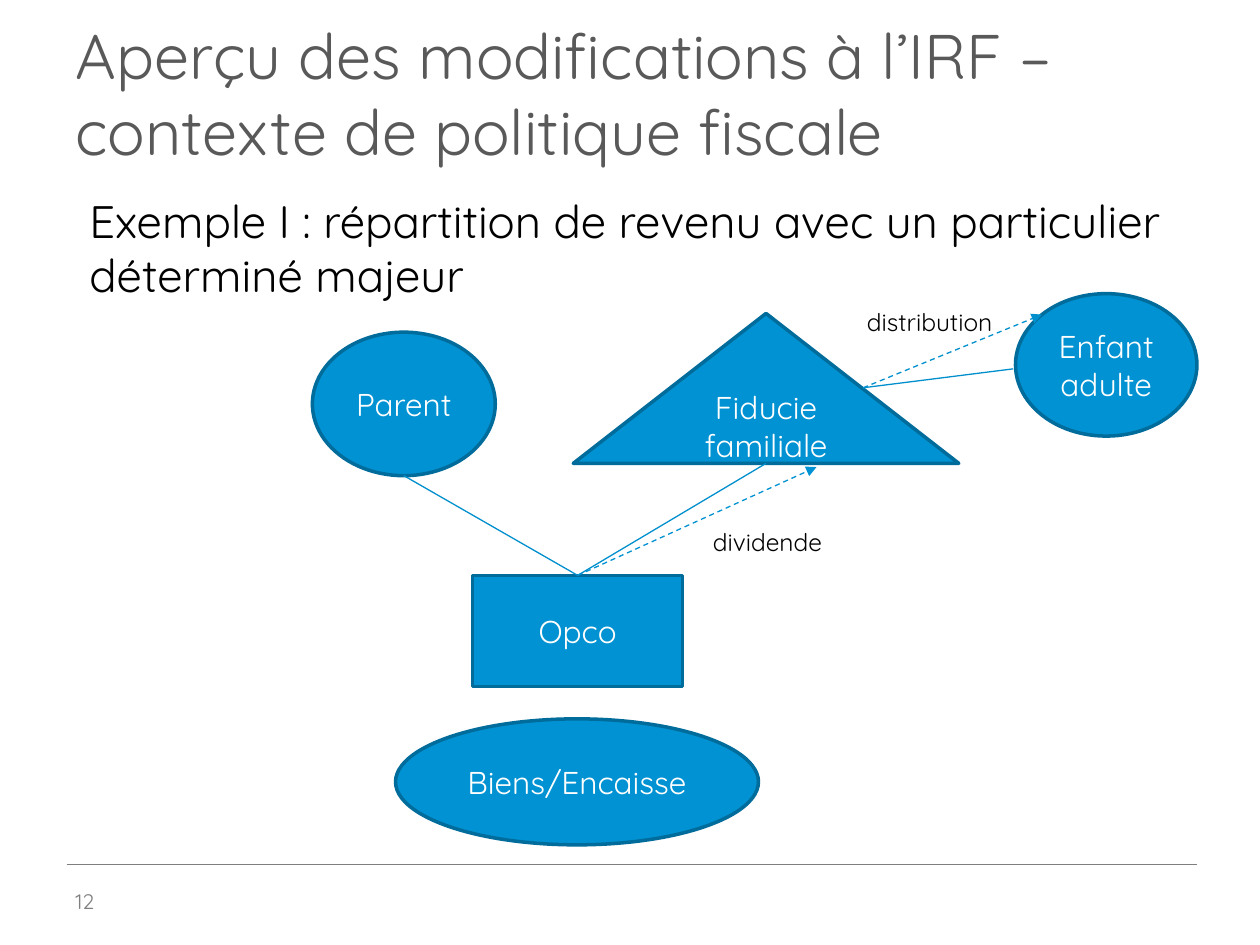
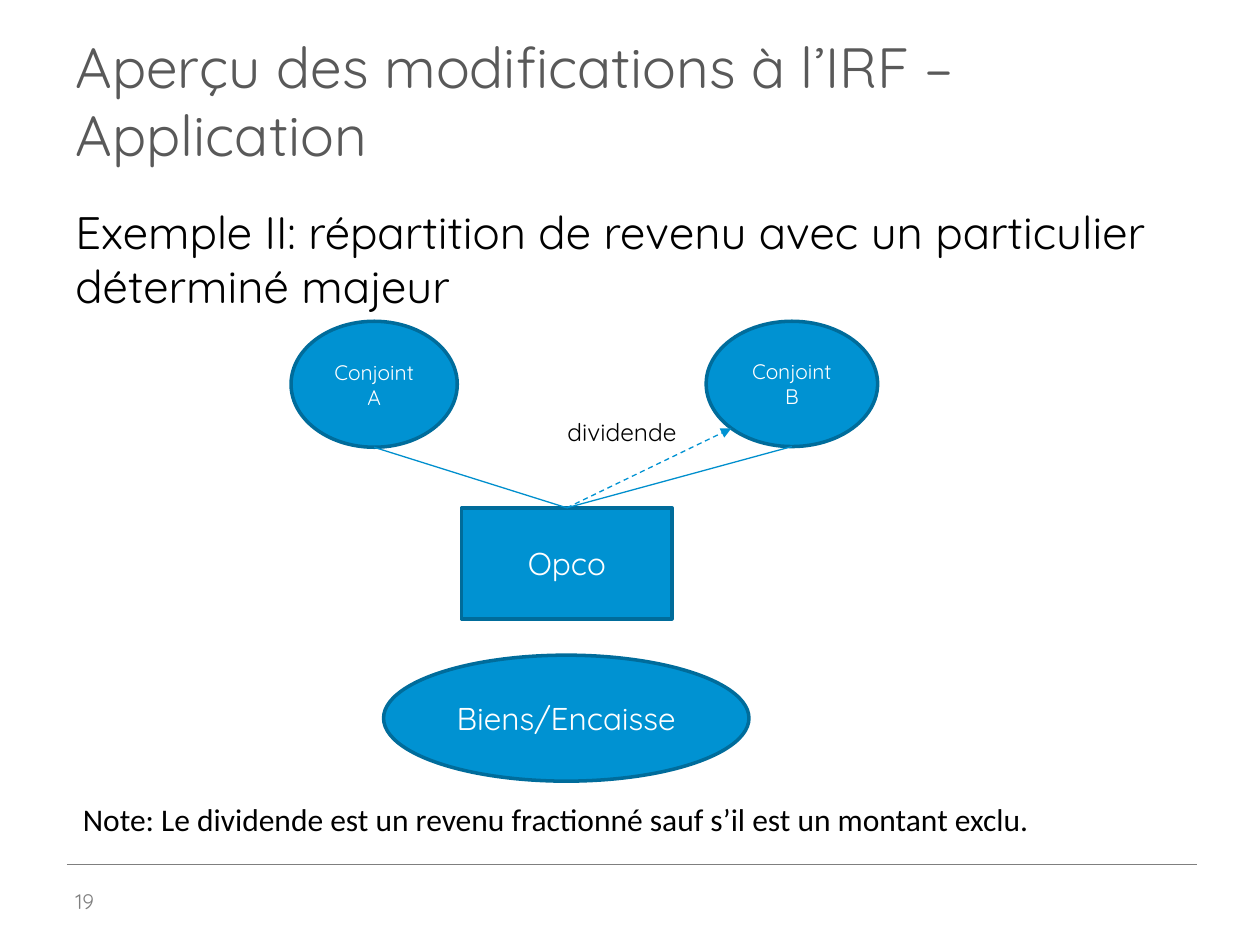
from lxml import etree
from pptx import Presentation
from pptx.dml.color import RGBColor
from pptx.enum.dml import MSO_LINE
from pptx.enum.shapes import MSO_CONNECTOR, MSO_SHAPE
from pptx.enum.text import MSO_ANCHOR, PP_ALIGN
from pptx.oxml.ns import qn
from pptx.util import Pt

RECT, OVAL, TRI = MSO_SHAPE.RECTANGLE, MSO_SHAPE.OVAL, MSO_SHAPE.ISOSCELES_TRIANGLE
LEFT, CENTER = PP_ALIGN.LEFT, PP_ALIGN.CENTER
TOP, MIDDLE, BOTTOM = MSO_ANCHOR.TOP, MSO_ANCHOR.MIDDLE, MSO_ANCHOR.BOTTOM
STRAIGHT, DASH = MSO_CONNECTOR.STRAIGHT, MSO_LINE.DASH

# Shared look
FONT = "Quicksand"
BLUE, EDGE, LINK = "0092D2", "006C9B", "008FCD"
BLACK, WHITE, GREY, DARK = "000000", "FFFFFF", "7F7F7F", "595959"
TITLE_BOX = (36, 21.6, 648, 77.8)
PAGE_BOX = (36, 500.4, 77, 28.8)
RULE = ((38.2, 493.9), (684, 493.9))
OPCO = (120.2, 63.4)


def color(code):
    return RGBColor.from_string(code)


def place(shape, box):
    for name, value in zip(("left", "top", "width", "height"), box):
        setattr(shape, name, Pt(value))


def write(shape, text, size, code, align=LEFT, anchor=TOP, wrap=True, font=FONT):
    frame = shape.text_frame
    frame.text = text
    for name, value in {"word_wrap": wrap, "vertical_anchor": anchor}.items():
        setattr(frame, name, value)
    para = frame.paragraphs[0]
    para.alignment = align
    for name, value in {"size": Pt(size), "name": font, "bold": False}.items():
        setattr(para.font, name, value)
    para.font.color.rgb = color(code)


def label(slide, box, text, size=14, code=BLACK, **form):
    shape = slide.shapes.add_textbox(*map(Pt, box))
    write(shape, text, size, code, **form)


def line(slide, start, end, code=LINK, width=0.75, arrow=False):
    link = slide.shapes.add_connector(STRAIGHT, *map(Pt, (*start, *end)))
    link.line.color.rgb = color(code)
    link.line.width = Pt(width)
    if arrow:
        link.line.dash_style = DASH
        tail = etree.SubElement(link.line._get_or_add_ln(), qn("a:tailEnd"))
        tail.set("type", "triangle")
    etree.SubElement(link._element.spPr, qn("a:effectLst"))
    return link


def node(slide, kind, box, text, size=18):
    shape = slide.shapes.add_shape(kind, *map(Pt, box))
    shape.shadow.inherit = False
    shape.fill.solid()
    shape.fill.fore_color.rgb = color(BLUE)
    shape.line.color.rgb = color(EDGE)
    shape.line.width = Pt(2)
    write(shape, text, size, WHITE, CENTER, MIDDLE)
    return shape


def foot(box):
    x, y, w, h = box
    return x + w / 2, y + h


def base(deck, title, size, lead, lead_at, page):
    """Title, lead text, rule and page number."""
    slide = deck.slides.add_slide(deck.slide_layouts[5])
    head = slide.shapes.title
    place(head, TITLE_BOX)
    write(head, title, size, DARK, anchor=BOTTOM)
    line(slide, *RULE, GREY, 0.25)
    label(slide, (*lead_at, 648, 75), lead, 26)
    label(slide, PAGE_BOX, page, 12, GREY, anchor=MIDDLE)
    return slide


def shift(origin, box):
    return (origin[0] + box[0], origin[1] + box[1], *box[2:])


def company(slide, box, assets, owners, target):
    """Opco with its assets, links to its owners and the dividend arrow."""
    opco = node(slide, RECT, box, "Opco")
    node(slide, OVAL, assets, "Biens/Encaisse")
    peak = (box[0] + box[2] / 2, box[1])
    for owner in owners:
        line(slide, foot(owner), peak).end_connect(opco, 0)
    line(slide, peak, target, BLUE, arrow=True).begin_connect(opco, 0)


def trust_chart(slide, origin):
    parent = shift(origin, (0.5, 22, 104.5, 82))
    trust = shift(origin, (149.6, 11.3, 220.3, 85.7))
    child = shift(origin, (402.3, 0, 103.7, 81.4))
    node(slide, OVAL, parent, "Parent")
    node(slide, TRI, trust, "Fiducie familiale")
    node(slide, OVAL, child, "Enfant adulte")
    company(slide, shift(origin, (92, 161, *OPCO)),
            shift(origin, (48, 243, 207.4, 72)),
            (parent, trust), shift(origin, (288.6, 99.1)))
    # Trust to child
    side = shift(origin, (315.2, 53.8))
    line(slide, shift(origin, (400.9, 43)), side)
    line(slide, side, shift(origin, (417.4, 12)), arrow=True)
    label(slide, shift(origin, (222.3, 130, 84.2, 24.5)), "dividende", wrap=False)
    label(slide, shift(origin, (310.2, 4, 87.8, 24.5)), "distribution", wrap=False)


def spouse_chart(slide, origin):
    first = shift(origin, (0, 0, 95, 72))
    second = shift(origin, (237.2, 0, 98, 71.6))
    node(slide, OVAL, first, "Conjoint A", 12)
    node(slide, OVAL, second, "Conjoint B", 12)
    company(slide, shift(origin, (97.5, 106.6, *OPCO)),
            shift(origin, (52.9, 190.8, 208.8, 72)),
            (first, second), shift(origin, (251.6, 61.2)))
    label(slide, shift(origin, (150.8, 51.1, 84.2, 24.5)), "dividende", wrap=False)


def main():
    deck = Presentation()
    deck.slide_width, deck.slide_height = Pt(720), Pt(540)

    # Example I
    slide = base(deck, "Aperçu des modifications à l’IRF – contexte de politique fiscale", 36,
                 "Exemple I : répartition de revenu avec un particulier déterminé majeur",
                 (44, 106.6), "12")
    trust_chart(slide, (178, 167.8))

    # Example II
    slide = base(deck, "Aperçu des modifications à l’IRF – Application", 32.4,
                 "Exemple II: répartition de revenu avec un particulier déterminé majeur",
                 (36, 113), "19")
    spouse_chart(slide, (166.3, 183.6))
    label(slide, (40.3, 453.6, 562.3, 28.8),
          "Note: Le dividende est un revenu fractionné sauf s’il est un montant exclu.",
          18, wrap=False, font="Calibri")

    deck.save("out.pptx")


if __name__ == "__main__":
    main()
